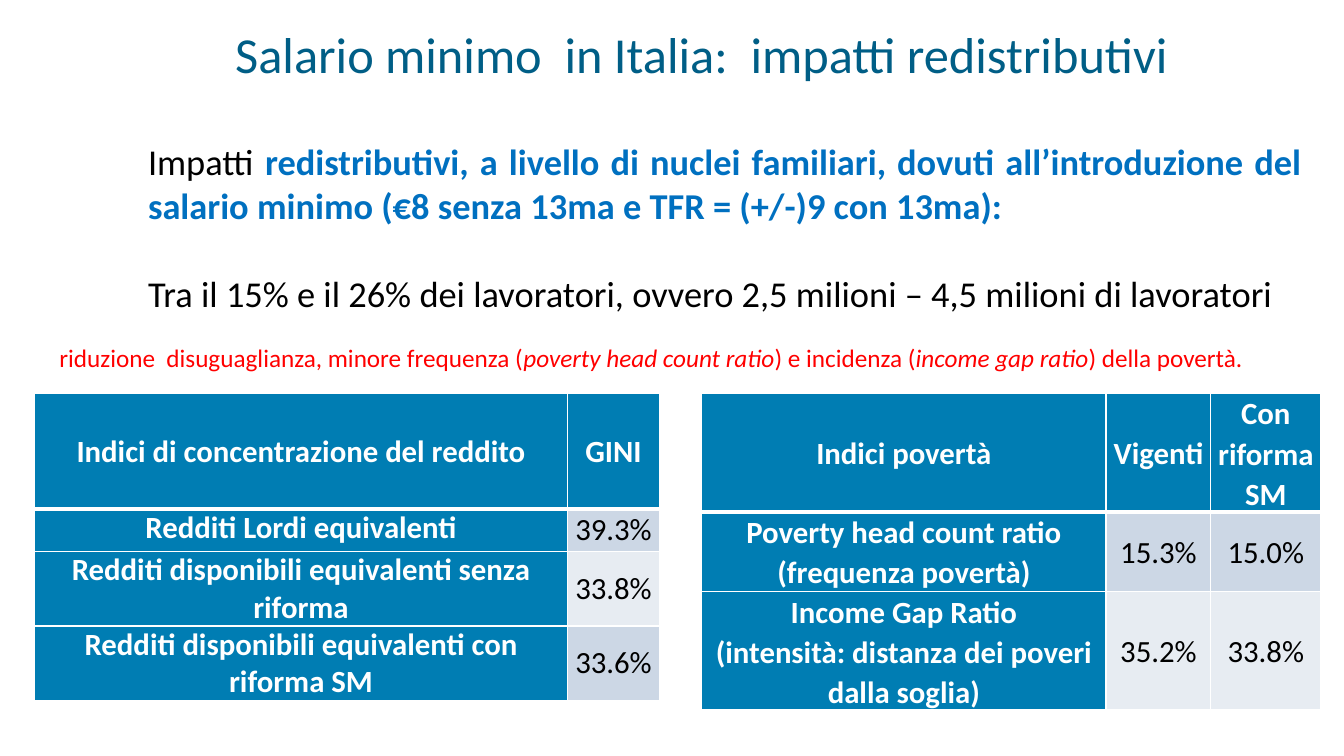
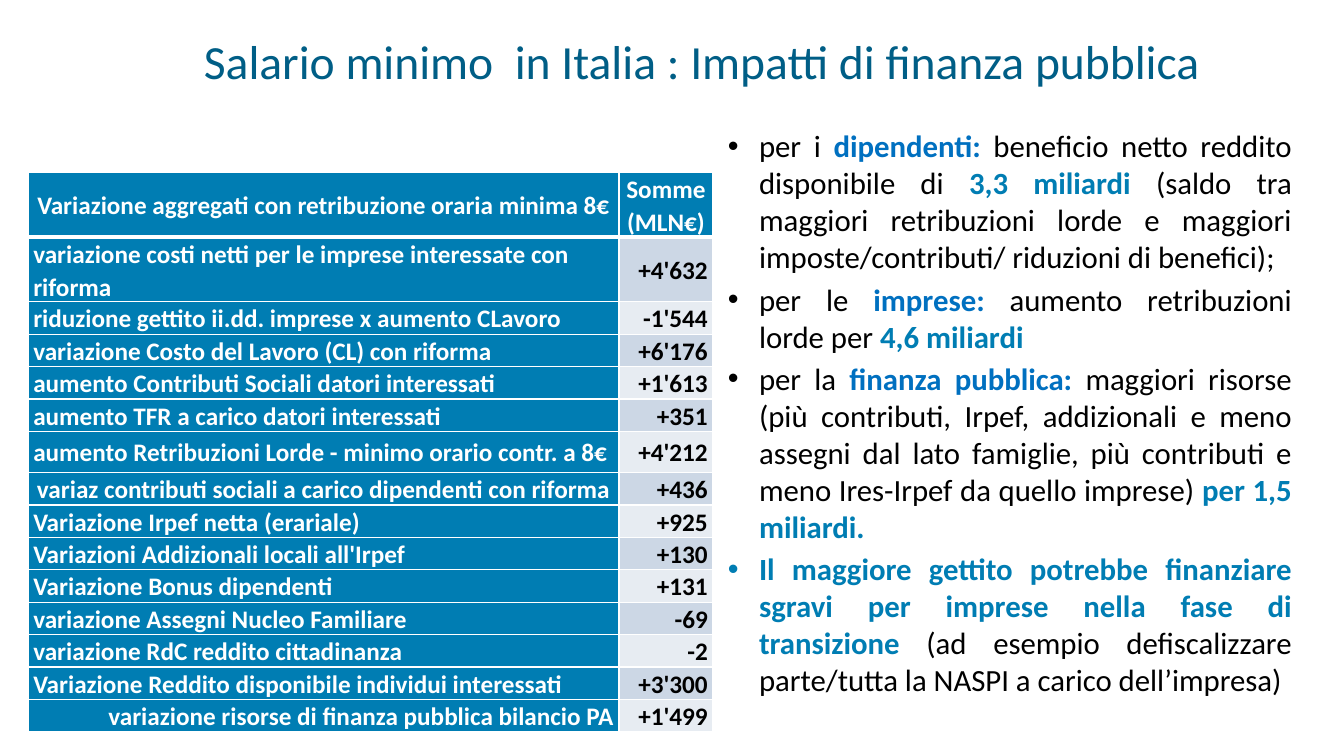
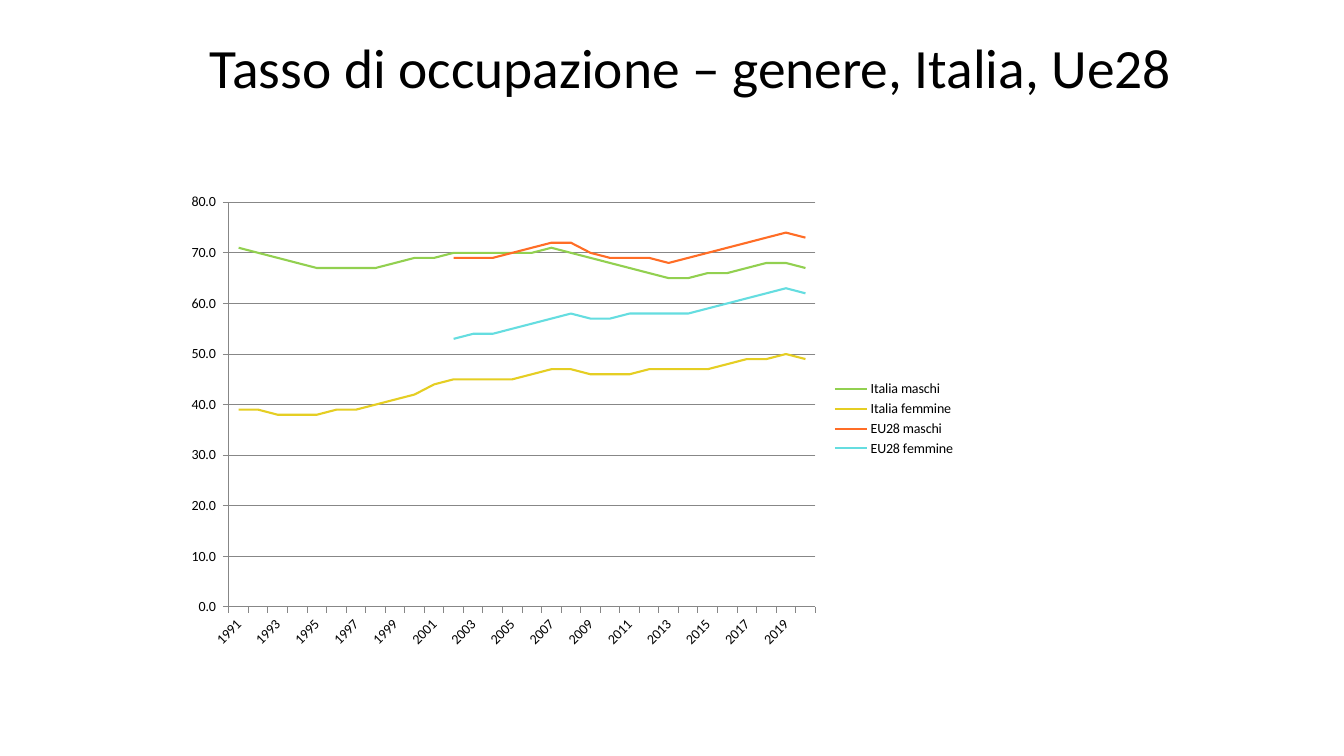
from dataclasses import dataclass, field
from typing import NamedTuple

from lxml import etree
from pptx import Presentation
from pptx import util as u
from pptx.chart import data as chart_data
from pptx.dml.color import RGBColor
from pptx.enum import chart as charts, text
from pptx.oxml import ns

# Grid, colours and shared formats
WIDTH, HEIGHT = u.Inches(13.33), u.Inches(7.5)
COLUMNS, ROWS = 133.3, 75
COLORS = {
    "title": "005E86", "black": "000000", "white": "FFFFFF", "red": "FF0000",
    "key": "0070C0", "teal": "007DB3", "band_dark": "CCD7E5", "band_light": "E7ECF2",
    "grid": "878787", "green": "92D050", "yellow": "E5CE23", "orange": "FF6D26",
    "cyan": "65DDE0",
}
FONT = "Calibri"
LEFT, CENTER, RIGHT, JUSTIFY = (text.PP_ALIGN.LEFT, text.PP_ALIGN.CENTER,
                                text.PP_ALIGN.RIGHT, text.PP_ALIGN.JUSTIFY)
TOP, MIDDLE = text.MSO_ANCHOR.TOP, text.MSO_ANCHOR.MIDDLE
TITLE_FRAME = {"word_wrap": True, "auto_size": text.MSO_AUTO_SIZE.NONE}
BODY_FRAME = {"word_wrap": True, "auto_size": text.MSO_AUTO_SIZE.SHAPE_TO_FIT_TEXT}
CELL_FORMAT = {"margin_left": u.Inches(0.05), "margin_right": u.Inches(0.05),
               "margin_top": 0, "margin_bottom": 0}


class Box(NamedTuple):
    """Left, top, width and height in grid columns and rows."""
    left: float
    top: float
    width: float
    height: float


class Run(NamedTuple):
    words: str
    color: str = "black"
    bold: bool = False
    italic: bool = False


@dataclass
class Paragraph:
    runs: list[Run]
    format: dict = field(default_factory=dict)
    bullet: bool = False


@dataclass
class Title:
    words: str
    box: Box
    size: float
    color: str = "title"
    align: int = CENTER
    anchor: int = MIDDLE


@dataclass
class Grid:
    """A table whose header row and first column are teal."""
    left: float
    top: float
    columns: list[float]
    heights: list[float]
    rows: list[tuple]
    size: float
    value_align: int = CENTER
    label_align: int = CENTER
    label_anchor: int = MIDDLE
    label_spacing: float = 1.07
    bold_values: bool = False
    special_aligns: dict = field(default_factory=dict)


class Line(NamedTuple):
    name: str
    color: str
    values: list


# Drawing functions
def cols(n: float) -> int:
    return round(WIDTH * n / COLUMNS)


def rows(n: float) -> int:
    return round(HEIGHT * n / ROWS)


def place(box: Box) -> tuple:
    return cols(box.left), rows(box.top), cols(box.width), rows(box.height)


def rgb(color: str) -> RGBColor:
    return RGBColor.from_string(COLORS[color])


def apply(target, values: dict) -> None:
    for key, value in values.items():
        setattr(target, key, value)


def style(font, size: float, color: str, bold: bool = False, italic: bool = False) -> None:
    apply(font, {"name": FONT, "size": u.Pt(size), "bold": bold, "italic": italic})
    font.color.rgb = rgb(color)


def add_titled_slide(deck, title: Title):
    slide = deck.slides.add_slide(deck.slide_layouts[5])
    heading = slide.shapes.title
    apply(heading, dict(zip(("left", "top", "width", "height"), place(title.box))))
    frame = heading.text_frame
    apply(frame, {**TITLE_FRAME, "vertical_anchor": title.anchor})
    frame.text = title.words
    line = frame.paragraphs[0]
    apply(line, {"alignment": title.align, "line_spacing": 0.9})
    style(line.runs[0].font, title.size, title.color)
    return slide


def add_bullet(paragraph) -> None:
    props = paragraph._p.get_or_add_pPr()
    indent = u.Inches(0.31)
    props.set("marL", str(indent))
    props.set("indent", str(-indent))
    etree.SubElement(props, ns.qn("a:buFont"), typeface="Arial")
    etree.SubElement(props, ns.qn("a:buChar"), char="•")


def add_text(slide, box: Box, size: float, paragraphs: list[Paragraph]) -> None:
    frame = slide.shapes.add_textbox(*place(box)).text_frame
    apply(frame, BODY_FRAME)
    for i, item in enumerate(paragraphs):
        line = frame.add_paragraph() if i else frame.paragraphs[0]
        if item.bullet:
            add_bullet(line)
        apply(line, {"alignment": JUSTIFY, **item.format})
        for part in item.runs:
            run = line.add_run()
            run.text = part.words
            style(run.font, size, part.color, part.bold, part.italic)


def add_borders(cell, header: bool, below_header: bool) -> None:
    props = cell._tc.get_or_add_tcPr()
    thick = {"lnB": header, "lnT": below_header}
    for side in ("lnL", "lnR", "lnT", "lnB"):
        width = u.Pt(3 if thick.get(side) else 1)
        edge = etree.SubElement(props, ns.qn(f"a:{side}"), w=str(width))
        fill = etree.SubElement(edge, ns.qn("a:solidFill"))
        etree.SubElement(fill, ns.qn("a:srgbClr"), val=COLORS["white"])


def add_grid(slide, grid: Grid) -> None:
    box = Box(grid.left, grid.top, sum(grid.columns), sum(grid.heights))
    table = slide.shapes.add_table(len(grid.rows), len(grid.columns), *place(box)).table
    for column, width in zip(table.columns, grid.columns):
        column.width = cols(width)
    for r, (entries, height) in enumerate(zip(grid.rows, grid.heights)):
        table.rows[r].height = rows(height)
        for c, entry in enumerate(entries):
            cell = table.cell(r, c)
            header, label = r == 0, r > 0 and c == 0
            add_borders(cell, header, r == 1)
            cell.fill.solid()
            band = "band_dark" if r % 2 else "band_light"
            cell.fill.fore_color.rgb = rgb("teal" if header or label else band)
            apply(cell, {**CELL_FORMAT,
                         "vertical_anchor": grid.label_anchor if label else MIDDLE})
            align = grid.value_align
            if header:
                align = CENTER
            elif label:
                align = grid.special_aligns.get(r, grid.label_align)
            cell.text_frame.text = entry
            for line in cell.text_frame.paragraphs:
                apply(line, {"alignment": align,
                             "line_spacing": 1.07 if header else grid.label_spacing})
                style(line.runs[0].font, grid.size,
                      "white" if header or label else "black",
                      header or label or grid.bold_values)


def set_plot_area(chart, shares: dict) -> None:
    area = chart._chartSpace.chart.plotArea
    for old in area.findall(ns.qn("c:layout")):
        area.remove(old)
    layout = etree.Element(ns.qn("c:layout"))
    manual = etree.SubElement(layout, ns.qn("c:manualLayout"))
    settings = {"layoutTarget": "inner", "xMode": "edge", "yMode": "edge", **shares}
    for key, value in settings.items():
        etree.SubElement(manual, ns.qn(f"c:{key}"), val=str(value))
    area.insert(0, layout)


def add_line_chart(slide, box: Box, years: range, lines: list[Line]) -> None:
    data = chart_data.CategoryChartData()
    data.categories = [str(year) for year in years]
    for line in lines:
        data.add_series(line.name, line.values)
    chart = slide.shapes.add_chart(charts.XL_CHART_TYPE.LINE, *place(box), data).chart
    style(chart.font, 10, "black")
    apply(chart, {"has_title": False, "has_legend": True})
    apply(chart.legend, {"position": charts.XL_LEGEND_POSITION.RIGHT,
                         "include_in_layout": False})
    chart.plots[0].vary_by_categories = False
    for series, line in zip(chart.plots[0].series, lines):
        series.smooth = False
        series.marker.style = charts.XL_MARKER_STYLE.NONE
        series.format.line.width = u.Pt(1.5)
        series.format.line.color.rgb = rgb(line.color)

    # Axes
    rate, year = chart.value_axis, chart.category_axis
    apply(rate, {"minimum_scale": 0, "maximum_scale": 80, "major_unit": 10,
                 "has_major_gridlines": True})
    apply(rate.tick_labels, {"number_format": "#,##0.0_ ;\\-#,##0.0\\ ",
                             "number_format_is_linked": False})
    for outline in (rate.format.line, year.format.line, rate.major_gridlines.format.line):
        outline.width = u.Pt(0.75)
        outline.color.rgb = rgb("grid")
    for axis in (rate, year):
        axis.major_tick_mark = charts.XL_TICK_MARK.OUTSIDE
        style(axis.tick_labels.font, 10, "black")
    year._element.find(ns.qn("c:txPr")).find(ns.qn("a:bodyPr")).set("rot", "-2700000")
    skip = etree.Element(ns.qn("c:tickLblSkip"), val="2")
    year._element.find(ns.qn("c:noMultiLvlLbl")).addprevious(skip)
    set_plot_area(chart, {"x": 0.07, "y": 0.04, "w": 0.74, "h": 0.86})


# Slide contents
def redistribution(deck) -> None:
    slide = add_titled_slide(deck, Title(
        "Salario minimo  in Italia:  impatti redistributivi",
        Box(12.1, 2.5, 115, 11.2), 36, anchor=TOP))
    add_text(slide, Box(13.7, 13.3, 116.6, 18.5), 26, [
        Paragraph([Run("Impatti "),
                   Run("redistributivi, a livello di nuclei familiari, dovuti "
                       "all’introduzione del salario minimo (€8 senza 13ma e TFR = "
                       "(+/-)9 con 13ma):", "key", True)]),
        Paragraph([Run("Tra il 15% e il 26% dei lavoratori, ovvero 2,5 milioni – "
                       "4,5 milioni di lavoratori")], {"space_before": u.Pt(31.7)}),
    ])
    add_grid(slide, Grid(3.4, 39, [52.9, 9.1], [11.5, 4.2, 7.4, 7.4], [
        ("Indici di concentrazione del reddito", "GINI"),
        ("Redditi Lordi equivalenti", "39.3%"),
        ("Redditi disponibili equivalenti senza riforma", "33.8%"),
        ("Redditi disponibili equivalenti con riforma SM", "33.6%"),
    ], 22, label_anchor=TOP, label_spacing=1.0))
    add_grid(slide, Grid(69.6, 39, [40.1, 10.4, 10.9], [11.7, 7.9, 11.7], [
        ("Indici povertà", "Vigenti", "Con riforma SM"),
        ("Poverty head count ratio\n(frequenza povertà)", "15.3%", "15.0%"),
        ("Income Gap Ratio\n(intensità: distanza dei poveri dalla soglia)",
         "35.2%", "33.8%"),
    ], 22))
    add_text(slide, Box(4.9, 33.5, 120.9, 4), 18, [Paragraph([
        Run("riduzione  disuguaglianza, minore frequenza (", "red"),
        Run("poverty head count ratio", "red", italic=True),
        Run(") e incidenza (", "red"),
        Run("income gap ratio", "red", italic=True),
        Run(") della povertà.", "red"),
    ])])


def public_finance(deck) -> None:
    slide = add_titled_slide(deck, Title(
        "Salario minimo  in Italia : Impatti di finanza pubblica",
        Box(12.1, 0.8, 115, 11.2), 34))
    points = [
        [Run("per i "), Run("dipendenti:", "key", True),
         Run(" beneficio netto reddito disponibile di "),
         Run("3,3 miliardi ", "teal", True),
         Run("(saldo tra maggiori retribuzioni lorde e maggiori imposte/contributi/ "
             "riduzioni di benefici);")],
        [Run("per le "), Run("imprese:", "key", True),
         Run(" aumento retribuzioni lorde per "), Run("4,6 miliardi", "teal", True)],
        [Run("per la "), Run("finanza pubblica: ", "key", True),
         Run("maggiori risorse (più contributi, Irpef, addizionali e meno assegni dal "
             "lato famiglie, più contributi e meno Ires-Irpef da quello imprese) "),
         Run("per 1,5 miliardi.", "teal", True)],
        [Run("Il maggiore gettito potrebbe finanziare sgravi per imprese nella fase di "
             "transizione ", "teal", True),
         Run("(ad esempio defiscalizzare parte/tutta la NASPI a carico dell’impresa)")],
    ]
    add_text(slide, Box(71.2, 12.1, 57.9, 61.8), 22,
             [Paragraph(runs, {"space_after": u.Pt(4)}, True) for runs in points])
    changes = [
        ("Variazione aggregati con retribuzione oraria minima 8€", "Somme (MLN€)"),
        ("variazione costi netti per le imprese interessate con riforma", "+4'632"),
        ("riduzione gettito ii.dd. imprese x aumento CLavoro", "-1'544"),
        ("variazione Costo del Lavoro (CL) con riforma", "+6'176"),
        ("aumento Contributi Sociali datori interessati", "+1'613"),
        ("aumento TFR a carico datori interessati", "+351"),
        ("aumento Retribuzioni Lorde - minimo orario contr. a 8€", "+4'212"),
        ("variaz contributi sociali a carico dipendenti con riforma", "+436"),
        ("Variazione Irpef netta (erariale)", "+925"),
        ("Variazioni Addizionali locali all'Irpef", "+130"),
        ("Variazione Bonus dipendenti", "+131"),
        ("variazione Assegni Nucleo Familiare", "-69"),
        ("variazione RdC reddito cittadinanza", "-2"),
        ("Variazione Reddito disponibile individui interessati", "+3'300"),
        ("variazione risorse di finanza pubblica bilancio PA", "+1'499"),
    ]
    heights = [6.4, 6.3] + [3.2] * 4 + [4.1] + [3.2] * 8
    add_grid(slide, Grid(2.8, 17.1, [58.6, 9.3], heights, changes, 18,
                         value_align=RIGHT, label_align=LEFT, bold_values=True,
                         special_aligns={7: CENTER, 14: RIGHT}))


def employment(deck) -> None:
    slide = add_titled_slide(deck, Title(
        "Tasso di occupazione – genere, Italia, Ue28",
        Box(19.8, 3.7, 101.7, 6.5), 39.6, "black", LEFT))
    missing = [None] * 11
    add_line_chart(slide, Box(17.2, 18.2, 78.6, 46.7), range(1991, 2021), [
        Line("Italia maschi", "green",
             [71, 70, 69, 68, 67, 67, 67, 67, 68, 69, 69, 70, 70, 70, 70,
              70, 71, 70, 69, 68, 67, 66, 65, 65, 66, 66, 67, 68, 68, 67]),
        Line("Italia femmine", "yellow",
             [39, 39, 38, 38, 38, 39, 39, 40, 41, 42, 44, 45, 45, 45, 45,
              46, 47, 47, 46, 46, 46, 47, 47, 47, 47, 48, 49, 49, 50, 49]),
        Line("EU28 maschi", "orange", missing +
             [69, 69, 69, 70, 71, 72, 72, 70, 69, 69, 69, 68, 69, 70, 71, 72, 73, 74, 73]),
        Line("EU28 femmine", "cyan", missing +
             [53, 54, 54, 55, 56, 57, 58, 57, 57, 58, 58, 58, 58, 59, 60, 61, 62, 63, 62]),
    ])


def main() -> None:
    deck = Presentation()
    apply(deck, {"slide_width": WIDTH, "slide_height": HEIGHT})
    for build in (redistribution, public_finance, employment):
        build(deck)
    deck.save("out.pptx")


if __name__ == "__main__":
    main()
